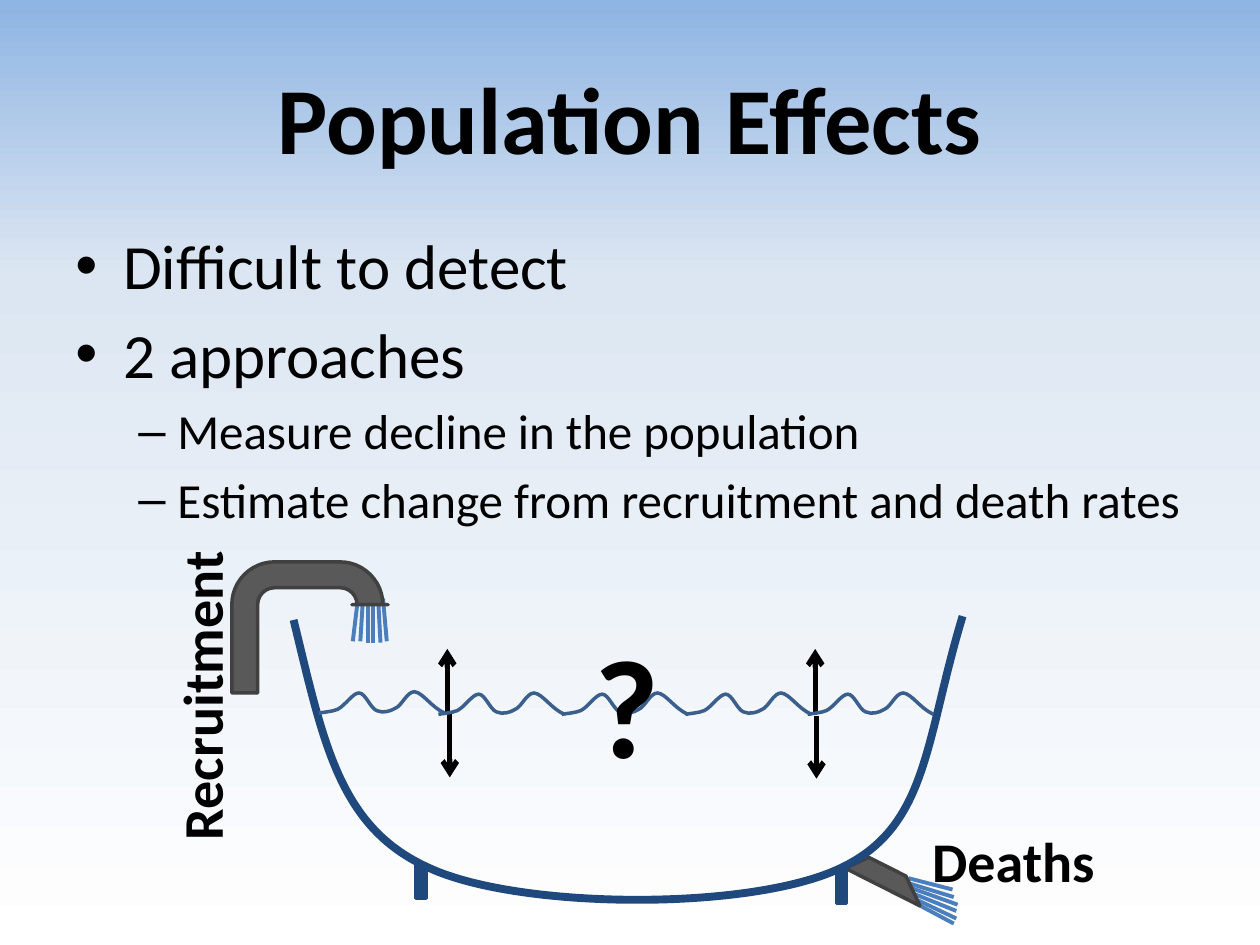
"""Build the slide on population effects with its bathtub diagram."""
from copy import deepcopy
from dataclasses import dataclass
from typing import Any

from lxml import etree
from pptx import Presentation
from pptx import util as u
from pptx.dml.color import RGBColor
from pptx.enum import shapes, text
from pptx.oxml.ns import qn

PX = 9144
BLACK, NAVY, WAVE, WATER = "000000", "1F497D", "3A5F8C", "4B7EBC"
PIPE, PIPE_EDGE = "595959", "404040"
Point = tuple[int, int]


@dataclass
class Line:
    start: Point
    end: Point


@dataclass
class Block:
    kind: Any
    at: tuple[int, int, int, int]
    fill: str
    edge: str
    rotation: int = 0
    flipped: bool = False
    adjustments: tuple[float, ...] = ()


@dataclass
class Item:
    words: str
    size: float
    bold: bool = False
    bullet: str = ""
    margin: int = 0
    hang: int = 0
    before: float = 0
    align: Any = text.PP_ALIGN.LEFT


LEVELS = (dict(size=36, bullet="•", margin=38, hang=38, before=7.4),
          dict(size=28, bullet="–", margin=81, hang=31, before=5.6))
BULLETS = [Item(words, **LEVELS[level]) for level, words in (
    (0, "Difficult to detect"),
    (0, "2 approaches"),
    (1, "Measure decline in the population"),
    (1, "Estimate change from recruitment and death rates"))]

LEVEL_ARROWS = [Line((357, 567), (357, 617)), Line((648, 568), (648, 618)),
                Line((647, 567), (647, 515)), Line((355, 567), (355, 515))]
DRAIN_WATER = [Line((725, 716), (757, 733)), Line((719, 710), (759, 729)),
               Line((722, 708), (759, 723)), Line((721, 697), (756, 706)),
               Line((718, 700), (757, 712)), Line((721, 704), (760, 718))]
TAP_WATER = [Line((292, 471), (292, 510)), Line((304, 475), (307, 509)),
             Line((296, 472), (296, 510)), Line((288, 476), (286, 509)),
             Line((284, 476), (280, 509)), Line((300, 473), (302, 510))]

DRAIN = Block(shapes.MSO_SHAPE.DIAGONAL_STRIPE, (680, 678, 41, 52), PIPE, PIPE_EDGE,
              rotation=335, flipped=True)
TAP = Block(shapes.MSO_SHAPE.U_TURN_ARROW, (184, 446, 124, 104), PIPE, PIPE_EDGE,
            adjustments=(0.197, 0.138, 0, 0.438, 0.327))
RIGHT_FOOT, LEFT_FOOT = [
    Block(shapes.MSO_SHAPE.RECTANGLE, (left, top, 8, 26), NAVY, NAVY)
    for left, top in ((664, 691), (330, 687))]

TUB = [(233, 492), (257, 590), (269, 657), (341, 689), (413, 722), (596, 723),
       (667, 689), (737, 656), (734, 588), (764, 489)]
TUB_HEIGHT = 225
RIPPLE = [(0, 0), (5, -1), (10, -1), (15, -3), (21, -6), (27, -16), (32, -16),
          (37, -16), (41, -4), (46, -2), (51, 0), (56, -1), (61, -4),
          (66, -6), (70, -17), (76, -17), (83, -16), (89, -5), (100, 0)]
RIPPLE_HEIGHT = 17
RIPPLE_STARTS = [(253, 566), (348, 567), (446, 567), (544, 567), (641, 567)]


def apply(target: Any, values: dict[str, Any]) -> None:
    for name, value in values.items():
        setattr(target, name, value)


def emu(*lengths: int) -> list[int]:
    return [length * PX for length in lengths]


def color(value: str) -> RGBColor:
    return RGBColor.from_string(value)


def stroke(line: Any, value: str, width: float) -> None:
    line.color.rgb = color(value)
    line.width = u.Pt(width)


def paint_background(page: Any, stops: list[tuple[float, str]]) -> None:
    fill = page.background.fill
    fill.gradient()
    fill.gradient_angle = 270
    stop_list = page.element.find(".//" + qn("a:gsLst"))
    stop_list.append(deepcopy(stop_list[0]))
    for stop, (position, value) in zip(fill.gradient_stops, stops):
        stop.position = position
        stop.color.rgb = color(value)


def draw_lines(page: Any, lines: list[Line], value: str, width: float,
               arrow: bool = False) -> None:
    for line in lines:
        connector = page.shapes.add_connector(
            shapes.MSO_CONNECTOR.STRAIGHT, *emu(*line.start, *line.end))
        stroke(connector.line, value, width)
        if arrow:
            etree.SubElement(connector.line._get_or_add_ln(), qn("a:tailEnd"), type="arrow")
        etree.SubElement(connector._element.spPr, qn("a:effectLst"))


def draw_block(page: Any, block: Block) -> None:
    shape = page.shapes.add_shape(block.kind, *emu(*block.at))
    shape.shadow.inherit = False
    shape.fill.solid()
    shape.fill.fore_color.rgb = color(block.fill)
    stroke(shape.line, block.edge, 2)
    shape.rotation = block.rotation
    for index, value in enumerate(block.adjustments):
        shape.adjustments[index] = value
    if block.flipped:
        shape._element.spPr.xfrm.set("flipH", "1")


def draw_curve(page: Any, points: list[Point], height: int, value: str,
               width: float) -> None:
    """Draw cubic curves through start, control, control, end points."""
    start, *rest = [tuple(emu(*point)) for point in points]
    builder = page.shapes.build_freeform(*start)
    builder.add_line_segments(rest, close=False)
    shape = builder.convert_to_shape()
    outline = shape._element.find(".//" + qn("a:path"))
    segments = outline.findall(qn("a:lnTo"))
    for first in range(0, len(segments), 3):
        curve = etree.SubElement(outline, qn("a:cubicBezTo"))
        for segment in segments[first:first + 3]:
            curve.append(segment[0])
            outline.remove(segment)
    shape.height = height * PX
    outline.set("h", str(height * PX))
    shape.shadow.inherit = False
    shape.fill.background()
    stroke(shape.line, value, width)


def draw_text(page: Any, at: tuple[int, int, int, int], items: list[Item],
              rotation: int = 0, **frame_format: Any) -> None:
    box = page.shapes.add_textbox(*emu(*at))
    box.rotation = rotation
    frame = box.text_frame
    apply(frame, {"word_wrap": True} | frame_format)
    for index, item in enumerate(items):
        para = frame.add_paragraph() if index else frame.paragraphs[0]
        apply(para, {"alignment": item.align, "space_before": u.Pt(item.before)})
        if item.bullet:
            margin, hang = emu(item.margin, item.hang)
            props = para._p.get_or_add_pPr()
            props.set("marL", str(margin))
            props.set("indent", str(-hang))
            etree.SubElement(props, qn("a:buFont"), typeface="Arial")
            etree.SubElement(props, qn("a:buChar"), char=item.bullet)
        span = para.add_run()
        span.text = item.words
        apply(span.font, {"name": "Calibri", "size": u.Pt(item.size), "bold": item.bold})
        span.font.color.rgb = color(BLACK)


def main() -> None:
    deck = Presentation()
    deck.slide_width, deck.slide_height = emu(1000, 750)
    page = deck.slides.add_slide(deck.slide_layouts[6])
    label = {"word_wrap": False, "auto_size": text.MSO_AUTO_SIZE.SHAPE_TO_FIT_TEXT}
    paint_background(page, [(0, "8EB4E3"), (0.29, "DCE6F2"), (1, "FFFFFF")])
    draw_lines(page, LEVEL_ARROWS, BLACK, 3, arrow=True)
    draw_lines(page, DRAIN_WATER, WATER, 2.25)
    draw_block(page, DRAIN)
    draw_text(page, (730, 651, 150, 64), [Item("Deaths", 32, bold=True)], **label)
    draw_block(page, RIGHT_FOOT)
    draw_text(page, (50, 30, 900, 125),
              [Item("Population Effects", 54, bold=True, align=text.PP_ALIGN.CENTER)],
              vertical_anchor=text.MSO_ANCHOR.MIDDLE)
    draw_text(page, (50, 175, 900, 495), BULLETS)
    draw_curve(page, TUB, TUB_HEIGHT, NAVY, 4.5)
    draw_block(page, LEFT_FOOT)
    for left, top in RIPPLE_STARTS:
        draw_curve(page, [(left + x, top + y) for x, y in RIPPLE], RIPPLE_HEIGHT, WAVE, 2)
    draw_text(page, (462, 486, 72, 145), [Item("?", 80, bold=True)], **label)
    draw_lines(page, TAP_WATER, WATER, 2.25)
    draw_block(page, TAP)
    draw_text(page, (34, 519, 251, 64), [Item("Recruitment", 32, bold=True)],
              rotation=270, **label)
    deck.save("out.pptx")


if __name__ == "__main__":
    main()
